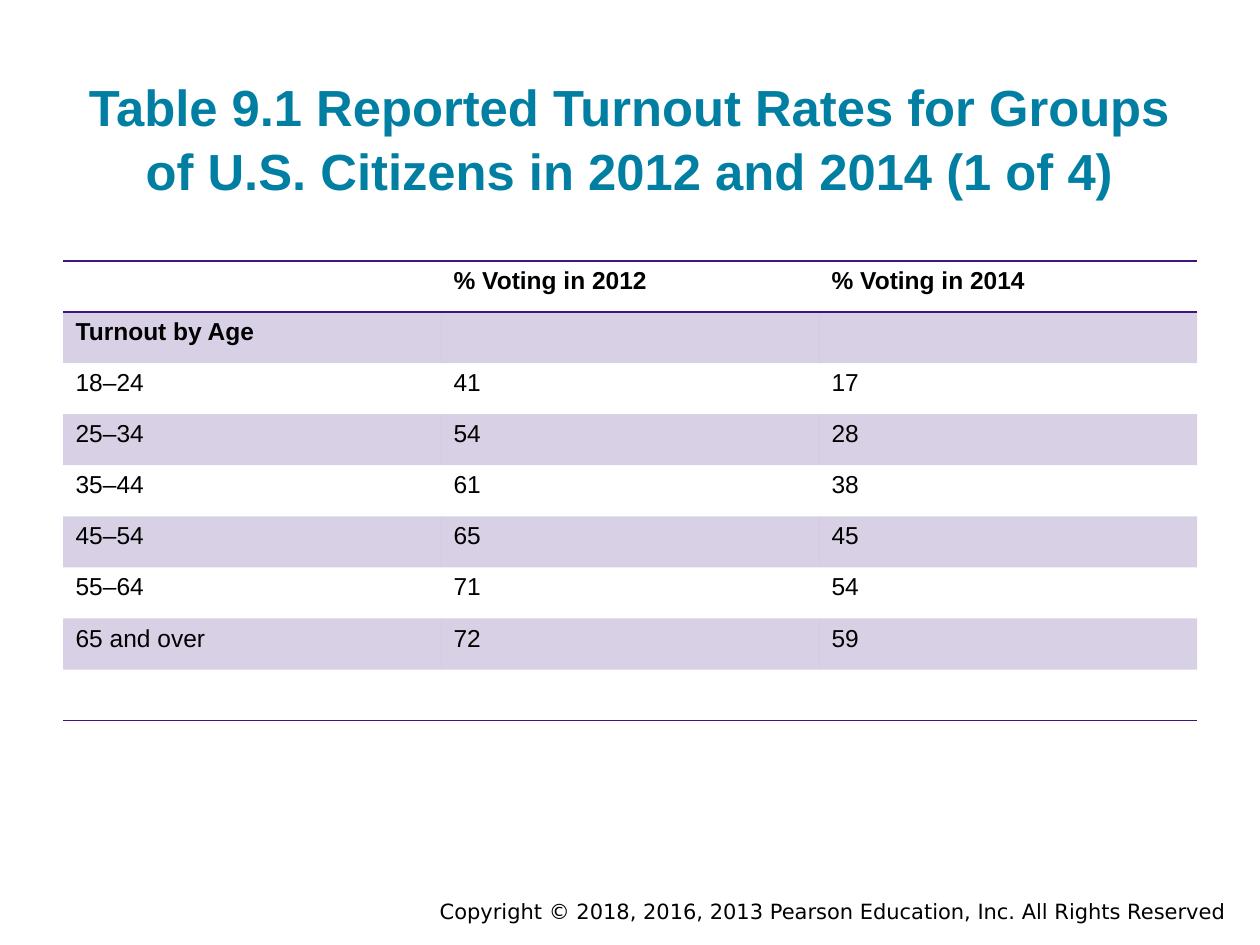
from dataclasses import dataclass

import pptx
import pptx.dml.color
import pptx.enum.text
import pptx.oxml
import pptx.oxml.ns
import pptx.util
from pptx.util import Inches

COLORS = {"title": "007FA3", "text": "000000", "accent": "3C1581"}
BAND_OPACITY = 20  # percent
NO_STYLE_NO_GRID = "{2D5ABB26-0587-4C30-8999-92F81FD0307C}"
ALIGN = pptx.enum.text.PP_ALIGN
ANCHOR = pptx.enum.text.MSO_ANCHOR


@dataclass
class TurnoutRow:
    label: str = ""
    voting_2012: str = ""
    voting_2014: str = ""
    bold: bool = False
    banded: bool = False
    edges: str = ""  # T and B for ruled top and bottom edges


ROWS = [
    TurnoutRow("", "% Voting in 2012", "% Voting in 2014", bold=True, edges="TB"),
    TurnoutRow("Turnout by Age", bold=True, banded=True),
    TurnoutRow("18–24", "41", "17"),
    TurnoutRow("25–34", "54", "28", banded=True),
    TurnoutRow("35–44", "61", "38"),
    TurnoutRow("45–54", "65", "45", banded=True),
    TurnoutRow("55–64", "71", "54"),
    TurnoutRow("65 and over", "72", "59", banded=True),
    TurnoutRow(edges="B"),
]


def write_text(frame, text: str, *, size: float, font: str = "Arial",
               color: str = "text", bold: bool = False, align=ALIGN.LEFT,
               spacing: float = 1.0) -> None:
    para = frame.paragraphs[0]
    para.alignment = align
    para.line_spacing = spacing
    if not text:
        return
    span = para.add_run()
    span.text = text
    span.font.name = font
    span.font.size = pptx.util.Pt(size)
    span.font.bold = bold
    span.font.color.rgb = pptx.dml.color.RGBColor.from_string(COLORS[color])


def rule_edge(cell, edge: str) -> None:
    """Draw a one-point accent line on the T or B edge of a cell."""
    cell._tc.get_or_add_tcPr().append(pptx.oxml.parse_xml(
        f'<a:ln{edge} {pptx.oxml.ns.nsdecls("a")} w="12700"><a:solidFill>'
        f'<a:srgbClr val="{COLORS["accent"]}"/></a:solidFill></a:ln{edge}>'))


def fill_band(cell) -> None:
    cell.fill.solid()
    cell.fill.fore_color.rgb = pptx.dml.color.RGBColor.from_string(COLORS["accent"])
    color = cell._tc.tcPr.find(".//" + pptx.oxml.ns.qn("a:solidFill")
                               + "/" + pptx.oxml.ns.qn("a:srgbClr"))
    color.append(pptx.oxml.parse_xml(
        f'<a:alpha {pptx.oxml.ns.nsdecls("a")} val="{BAND_OPACITY * 1000}"/>'))


def add_title(page) -> None:
    title = page.shapes.title
    title.left, title.top = Inches(0.5), Inches(0.34)
    title.width, title.height = Inches(9), Inches(1.35)
    frame = title.text_frame
    frame.word_wrap = True
    frame.auto_size = pptx.enum.text.MSO_AUTO_SIZE.NONE
    frame.vertical_anchor = ANCHOR.BOTTOM
    frame.margin_left = frame.margin_right = Inches(0.1)
    frame.margin_top = frame.margin_bottom = Inches(0.1)
    write_text(frame, "Table 9.1 Reported Turnout Rates for Groups of U.S. "
               "Citizens in 2012 and 2014 (1 of 4)",
               size=29, color="title", bold=True, align=ALIGN.CENTER, spacing=1.05)


def add_turnout_table(page, rows: list[TurnoutRow]) -> None:
    table = page.shapes.add_table(len(rows), 3, Inches(0.5), Inches(2.07),
                                  Inches(9), Inches(3.65)).table
    table.first_row = table.horz_banding = False
    table._tbl.tblPr.find(pptx.oxml.ns.qn("a:tableStyleId")).text = NO_STYLE_NO_GRID
    for row_index, row in enumerate(rows):
        for column, text in enumerate((row.label, row.voting_2012, row.voting_2014)):
            cell = table.cell(row_index, column)
            write_text(cell.text_frame, text, size=14, bold=row.bold)
            for edge in row.edges:
                rule_edge(cell, edge)
            if row.banded:
                fill_band(cell)
            else:
                cell.fill.background()


def add_copyright(page) -> None:
    box = page.shapes.add_textbox(Inches(2), Inches(7.08), Inches(7.83), Inches(0.3))
    box.text_frame.word_wrap = True
    write_text(box.text_frame,
               "Copyright © 2018, 2016, 2013 Pearson Education, Inc. All Rights Reserved",
               size=12, font="DejaVu Sans", align=ALIGN.RIGHT)


def main() -> None:
    deck = pptx.Presentation()
    deck.slide_width, deck.slide_height = Inches(10), Inches(7.5)
    page = deck.slides.add_slide(deck.slide_layouts.get_by_name("Title Only"))
    add_title(page)
    add_turnout_table(page, ROWS)
    add_copyright(page)
    deck.save("out.pptx")


if __name__ == "__main__":
    main()
